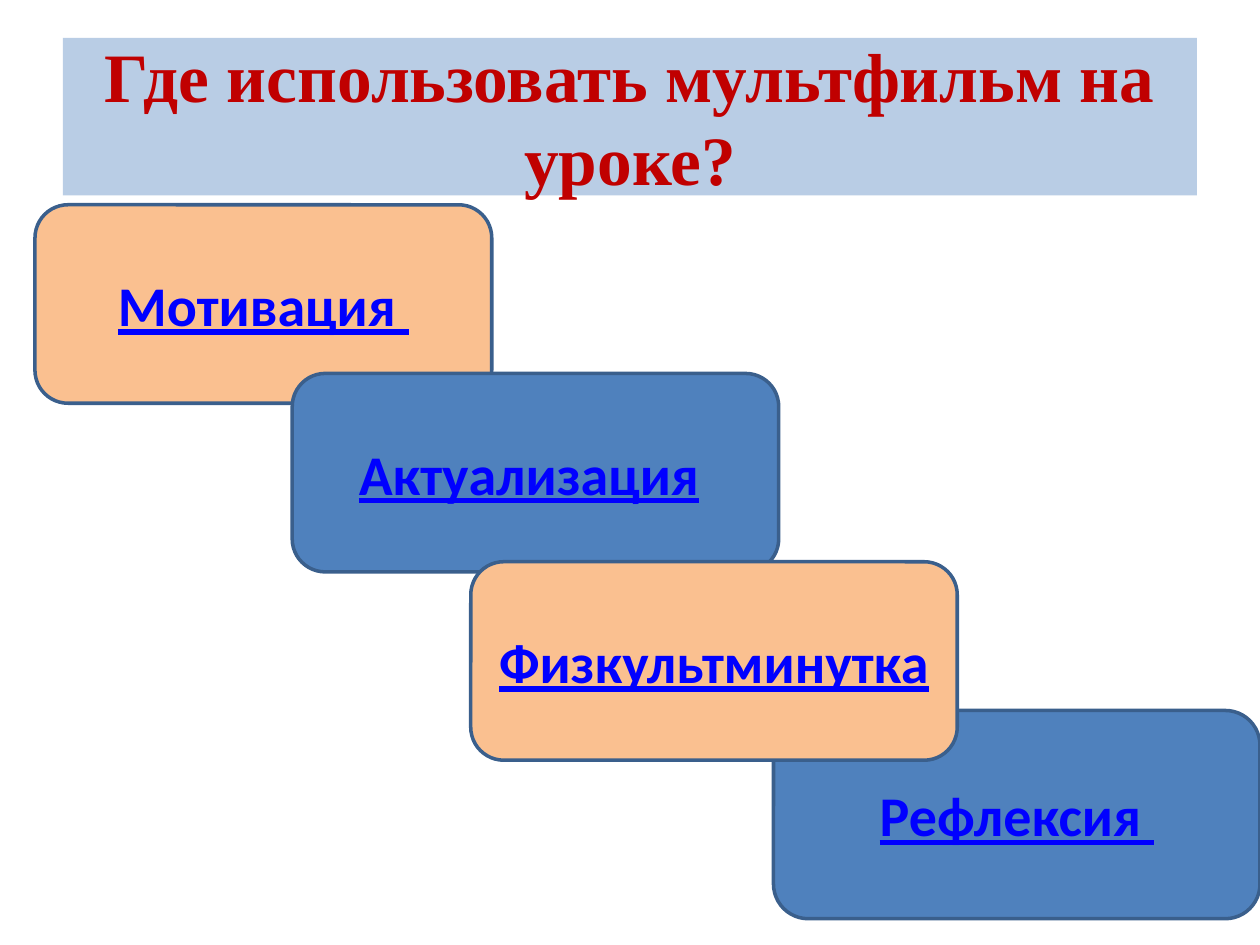
from pptx import Presentation
from pptx.dml.color import RGBColor
from pptx.enum import shapes, text
from pptx.util import Pt

HUES = {"band": "B9CDE5", "title": "C00000", "peach": "FAC090", "blue": "4F81BD",
        "edge": "3A5F8C", "link": "0000FF", "white": "FFFFFF"}


def add_box(kind, left, top, width, height, fill):
    box = slide.shapes.add_shape(kind, Pt(left), Pt(top), Pt(width), Pt(height))
    box.shadow.inherit = False
    box.fill.solid()
    box.fill.fore_color.rgb = RGBColor.from_string(HUES[fill])
    frame = box.text_frame
    frame.word_wrap = True
    frame.vertical_anchor = text.MSO_ANCHOR.MIDDLE
    frame.paragraphs[0].alignment = text.PP_ALIGN.CENTER
    return box


def add_run(box, words, face, size, hue, bold=True, under=False):
    run = box.text_frame.paragraphs[0].add_run()
    run.text = words
    font = run.font
    font.name, font.size = face, Pt(size)
    font.bold, font.underline = bold, under
    font.color.rgb = RGBColor.from_string(HUES[hue])


deck = Presentation()
deck.slide_width, deck.slide_height = Pt(720), Pt(540)
slide = deck.slides.add_slide(deck.slide_layouts[6])

title = add_box(shapes.MSO_SHAPE.RECTANGLE, 36, 21.6, 648, 90, "band")
title.line.fill.background()
add_run(title, "Где использовать мультфильм на уроке?", "Times New Roman", 39.6, "title")

steps = [
    (20, 117, 261, 113.4, "peach",
     [("Мотивация", "link", True, True), (" ", "link", False, True)]),
    (167, 213.4, 278, 113.4, "blue",
     [("Актуализация", "link", True, True), (" ", "white", True, False)]),
    (442, 406, 278, 119, "blue", [("Рефлексия ", "link", True, True)]),
    (269, 321, 278, 113.4, "peach", [("Физкультминутка", "link", True, True)]),
]
for left, top, width, height, fill, runs in steps:
    step = add_box(shapes.MSO_SHAPE.ROUNDED_RECTANGLE, left, top, width, height, fill)
    step.line.color.rgb = RGBColor.from_string(HUES["edge"])
    step.line.width = Pt(2)
    for words, hue, bold, under in runs:
        add_run(step, words, "Calibri", 32, hue, bold, under)

deck.save("out.pptx")
